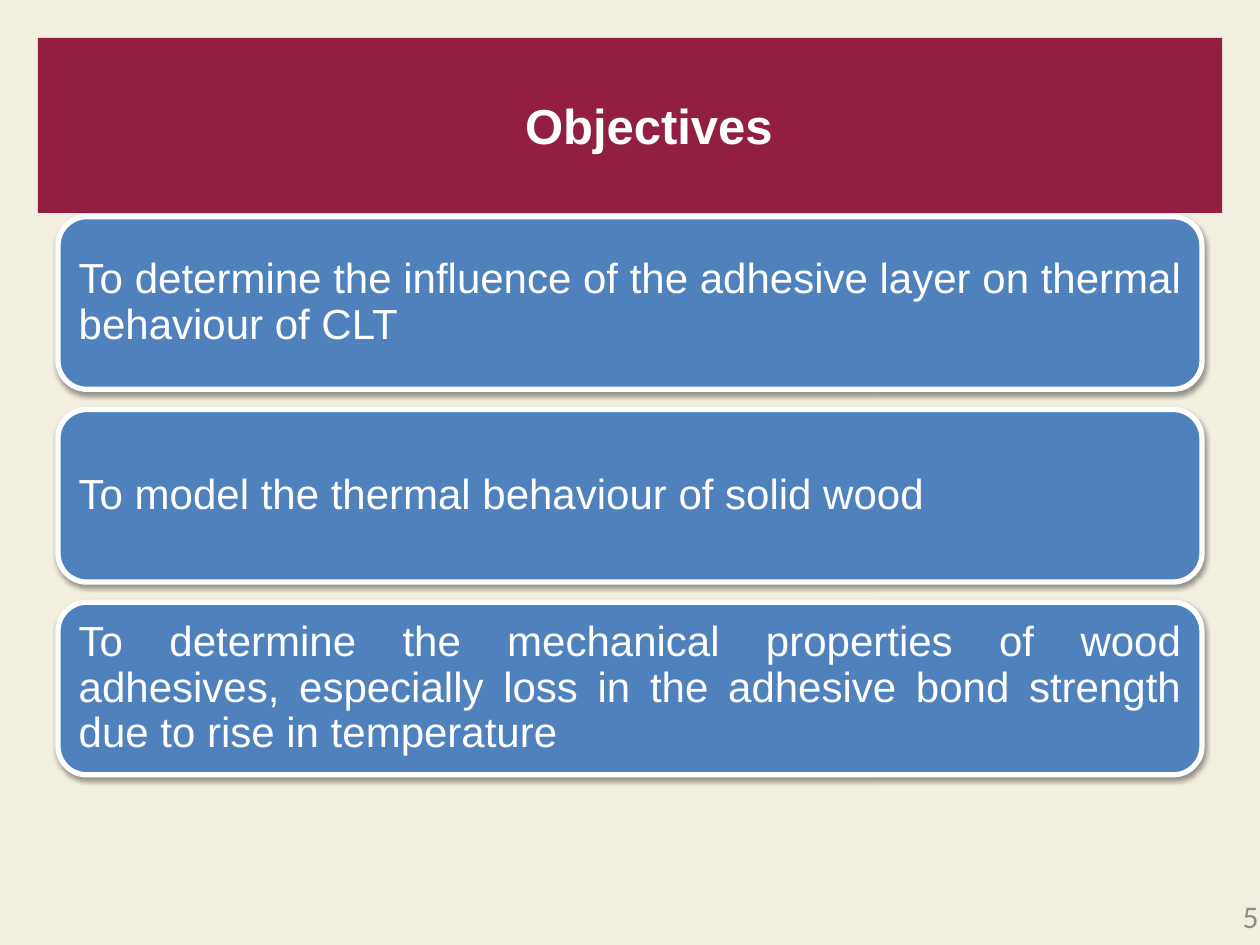
"""Build the Objectives slide: a title band above three rounded cards."""
from lxml.etree import fromstring
from pptx import Presentation
from pptx.dml.color import RGBColor
from pptx.enum.shapes import MSO_SHAPE as Shape
from pptx.enum.text import MSO_ANCHOR as Anchor, MSO_AUTO_SIZE as Fit, PP_ALIGN as Align
from pptx.util import Inches, Pt

TITLE = "Objectives"
GOALS = [
    "To determine the influence of the adhesive layer on thermal behaviour of CLT",
    "To model the thermal behaviour of solid wood",
    "To determine the mechanical properties of wood adhesives, especially loss "
    "in the adhesive bond strength due to rise in temperature",
]
PAGE = "5"
WIDE, HIGH = 10, 7.5
EDGE, SIDE = 0.3, 0.46
TOP, CARD, STEP = 1.72, 1.37, 1.53
SHADOW = """<a:effectLst xmlns:a="http://schemas.openxmlformats.org/drawingml/2006/main">
<a:outerShdw blurRad="40000" dist="20000" dir="5400000" rotWithShape="0">
<a:srgbClr val="000000"><a:alpha val="38000"/></a:srgbClr></a:outerShdw></a:effectLst>"""


def paint(fill, tone):
    fill.solid()
    fill.fore_color.rgb = RGBColor.from_string(tone)


def write(shape, text, size, tone="FFFFFF", face="Arial", bold=False,
          align=Align.CENTER, anchor=Anchor.MIDDLE, pads=(0, 0, 0, 0), lead=1):
    frame = shape.text_frame
    frame.word_wrap, frame.auto_size = True, Fit.NONE
    frame.vertical_anchor = anchor
    (frame.margin_left, frame.margin_top,
     frame.margin_right, frame.margin_bottom) = map(Inches, pads)
    para = frame.paragraphs[0]
    para.alignment, para.line_spacing = align, lead
    run = para.add_run()
    run.text = text
    font = run.font
    font.name, font.size, font.bold = face, Pt(size), bold
    font.color.rgb = RGBColor.from_string(tone)


def place(shape, *box):
    shape.left, shape.top, shape.width, shape.height = map(Inches, box)


def main():
    deck = Presentation()
    deck.slide_width, deck.slide_height = Inches(WIDE), Inches(HIGH)
    slide = deck.slides.add_slide(deck.slide_layouts[5])
    paint(slide.background.fill, "F2EFE0")

    title = slide.shapes.title
    place(title, EDGE, EDGE, WIDE - 2 * EDGE, 1.39)
    paint(title.fill, "921E42")
    write(title, TITLE, 28, bold=True, pads=(0.3, 0, 0, 0))

    for row, goal in enumerate(GOALS):
        box = (SIDE, TOP + row * STEP, WIDE - 2 * SIDE, CARD)
        card = slide.shapes.add_shape(Shape.ROUNDED_RECTANGLE, *map(Inches, box))
        paint(card.fill, "4F81BD")
        paint(card.line.fill, "FFFFFF")
        card.line.width = Pt(3)
        card._element.spPr.append(fromstring(SHADOW))
        write(card, goal, 24, align=Align.JUSTIFY, pads=(0.1,) * 4, lead=0.9)

    page = slide.shapes.add_textbox(*map(Inches, (7.69, 7.12, 2.3, 0.38)))
    write(page, PAGE, 18, tone="8C8C8C", face="Calibri", align=Align.RIGHT,
          anchor=Anchor.TOP)
    deck.save("out.pptx")


if __name__ == "__main__":
    main()
